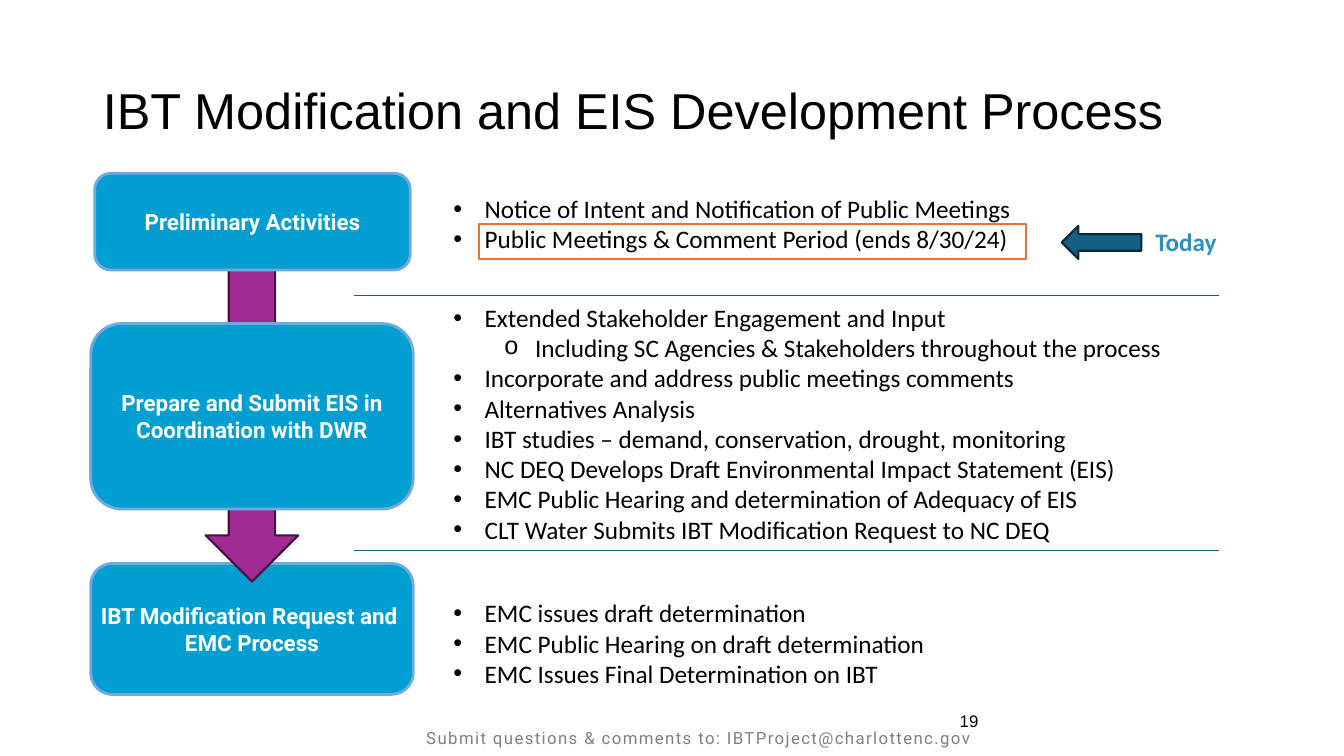
from lxml.etree import SubElement
from pptx import Presentation
from pptx.dml.color import RGBColor
from pptx.enum.shapes import MSO_CONNECTOR, MSO_SHAPE
from pptx.enum.text import MSO_ANCHOR as Anchor, MSO_AUTO_SIZE, PP_ALIGN as Align
from pptx.oxml.ns import qn
from pptx.util import Inches, Pt

COLORS = {
    "black": "000000", "white": "FFFFFF", "gray": "808080",
    "stage": "009ED1", "stage_edge": "71AAE0",
    "flow": "A02B93", "flow_edge": "461340",
    "teal": "156082", "teal_edge": "092A39",
    "highlight": "E97132", "today": "2D8FC2",
}
WIDTH, HEIGHT = Inches(13.33), Inches(7.5)
LIST_LEFT = 33
STAGES = {
    "first": (["Preliminary Activities"], (7.05, 22.93, 23.48, 12.8)),
    "second": (["Prepare and Submit EIS in Coordination with DWR"], (6.75, 42.8, 24, 24.53)),
    "third": (["IBT Modification Request and ", "EMC Process"], (6.75, 74.53, 24, 17.33)),
}
# Each list: top, width, height, then (level, text) items
LISTS = [
    (24.93, 45.83, 9.47, [
        (0, "Notice of Intent and Notification of Public Meetings"),
        (0, "Public Meetings & Comment Period (ends 8/30/24)"),
    ]),
    (39.33, 60.15, 33.6, [
        (0, "Extended Stakeholder Engagement and Input"),
        (1, "Including SC Agencies & Stakeholders throughout the process"),
        (0, "Incorporate and address public meetings comments"),
        (0, "Alternatives Analysis"),
        (0, "IBT studies – demand, conservation, drought, monitoring"),
        (0, "NC DEQ Develops Draft Environmental Impact Statement (EIS)"),
        (0, "EMC Public Hearing and determination of Adequacy of EIS"),
        (0, "CLT Water Submits IBT Modification Request to NC DEQ"),
    ]),
    (78.4, 45.83, 13.47, [
        (0, "EMC issues draft determination"),
        (0, "EMC Public Hearing on draft determination"),
        (0, "EMC Issues Final Determination on IBT"),
    ]),
]
BULLETS = [("Arial", "•"), ("Courier New", "o")]


def color(name):
    return RGBColor.from_string(COLORS[name])


def place(left, top, width, height):
    """Turn percentages of the slide's size into lengths."""
    return (int(WIDTH * left / 100), int(HEIGHT * top / 100),
            int(WIDTH * width / 100), int(HEIGHT * height / 100))


def set_font(para, name, size, tint, bold=False):
    font = para.font
    font.name, font.size, font.bold = name, Pt(size), bold
    font.color.rgb = color(tint)


def add_paragraphs(frame, texts):
    """Fill an empty frame, one paragraph for each text, and return them."""
    for index, text in enumerate(texts):
        para = frame.add_paragraph() if index else frame.paragraphs[0]
        para.add_run().text = text
    return frame.paragraphs


def add_figure(slide, preset, area, fill, edge, weight):
    figure = slide.shapes.add_shape(preset, *place(*area))
    figure.shadow.inherit = False
    figure.fill.solid()
    figure.fill.fore_color.rgb = color(fill)
    figure.line.color.rgb = color(edge)
    figure.line.width = Pt(weight)
    return figure


def add_stage(slide, texts, area):
    box = add_figure(slide, MSO_SHAPE.ROUNDED_RECTANGLE, area, "stage", "stage_edge", 2)
    frame = box.text_frame
    frame.word_wrap = True
    frame.vertical_anchor = Anchor.MIDDLE
    frame.margin_left = frame.margin_top = frame.margin_right = frame.margin_bottom = 0
    for para in add_paragraphs(frame, texts):
        para.alignment = Align.CENTER
        set_font(para, "Roboto", 16, "white", bold=True)


def add_text(slide, area, texts):
    frame = slide.shapes.add_textbox(*place(*area)).text_frame
    frame.word_wrap = True
    add_paragraphs(frame, texts)
    return frame


def add_bullet(para, level):
    para.level = level
    properties = para._p.get_or_add_pPr()
    properties.set("marL", str(Inches(0.31 + level * 0.5)))
    properties.set("indent", str(Inches(-0.31)))
    typeface, character = BULLETS[level]
    SubElement(properties, qn("a:buFont")).set("typeface", typeface)
    SubElement(properties, qn("a:buChar")).set("char", character)


def add_list(slide, top, width, height, items):
    frame = add_text(slide, (LIST_LEFT, top, width, height), [text for _, text in items])
    for para, (level, _) in zip(frame.paragraphs, items):
        add_bullet(para, level)
        set_font(para, "Calibri", 18, "black")


def add_divider(slide, row):
    left, top, width, _ = place(26.33, row, 64.37, 0)
    line = slide.shapes.add_connector(MSO_CONNECTOR.STRAIGHT, left + width, top, left, top)
    line.line.color.rgb = color("teal")
    line.line.width = Pt(1)
    SubElement(line._element.spPr, qn("a:effectLst"))


def format_title(title, text):
    title.left, title.top, title.width, title.height = place(6.9, 5.33, 86.25, 19.33)
    frame = title.text_frame
    frame.auto_size = MSO_AUTO_SIZE.NONE
    frame.vertical_anchor = Anchor.MIDDLE
    para = add_paragraphs(frame, [text])[0]
    para.alignment = Align.LEFT
    para.line_spacing = 0.9
    set_font(para, "Arial", 36, "black")


def add_today(slide):
    arrow = add_figure(slide, MSO_SHAPE.DOWN_ARROW, (80.72, 26.8, 2.48, 10.53),
                       "teal", "teal_edge", 1.5)
    arrow.rotation = 90
    label = add_text(slide, (85.22, 29.33, 6.6, 5.33), ["Today"])
    set_font(label.paragraphs[0], "Calibri", 18, "today", bold=True)


def add_footer(slide):
    number = add_text(slide, (70.67, 92.67, 22.5, 5.33), ["19"])
    number.vertical_anchor = Anchor.MIDDLE
    set_font(number.paragraphs[0], "Arial", 12, "black")
    contact = add_text(slide, (30.98, 95.6, 69, 4.4),
                       ["Submit questions & comments to: IBTProject@charlottenc.gov"])
    para = contact.paragraphs[0]
    set_font(para, "Roboto", 12, "gray")
    para.runs[0]._r.get_or_add_rPr().set("spc", "100")


def main():
    deck = Presentation()
    deck.slide_width, deck.slide_height = WIDTH, HEIGHT
    slide = deck.slides.add_slide(deck.slide_layouts[5])
    format_title(slide.shapes.title, "IBT Modification and EIS Development Process")
    add_figure(slide, MSO_SHAPE.RECTANGLE, (35.63, 29.6, 40.74, 4.67), "white", "highlight", 1.5)
    add_stage(slide, *STAGES["third"])
    add_figure(slide, MSO_SHAPE.DOWN_ARROW, (15.3, 34.27, 6.9, 42.67), "flow", "flow_edge", 1.5)
    for stage in ("second", "first"):
        add_stage(slide, *STAGES[stage])
    for group in LISTS:
        add_list(slide, *group)
    add_today(slide)
    for row in (39.07, 72.8):
        add_divider(slide, row)
    add_footer(slide)
    deck.save("out.pptx")


if __name__ == "__main__":
    main()
